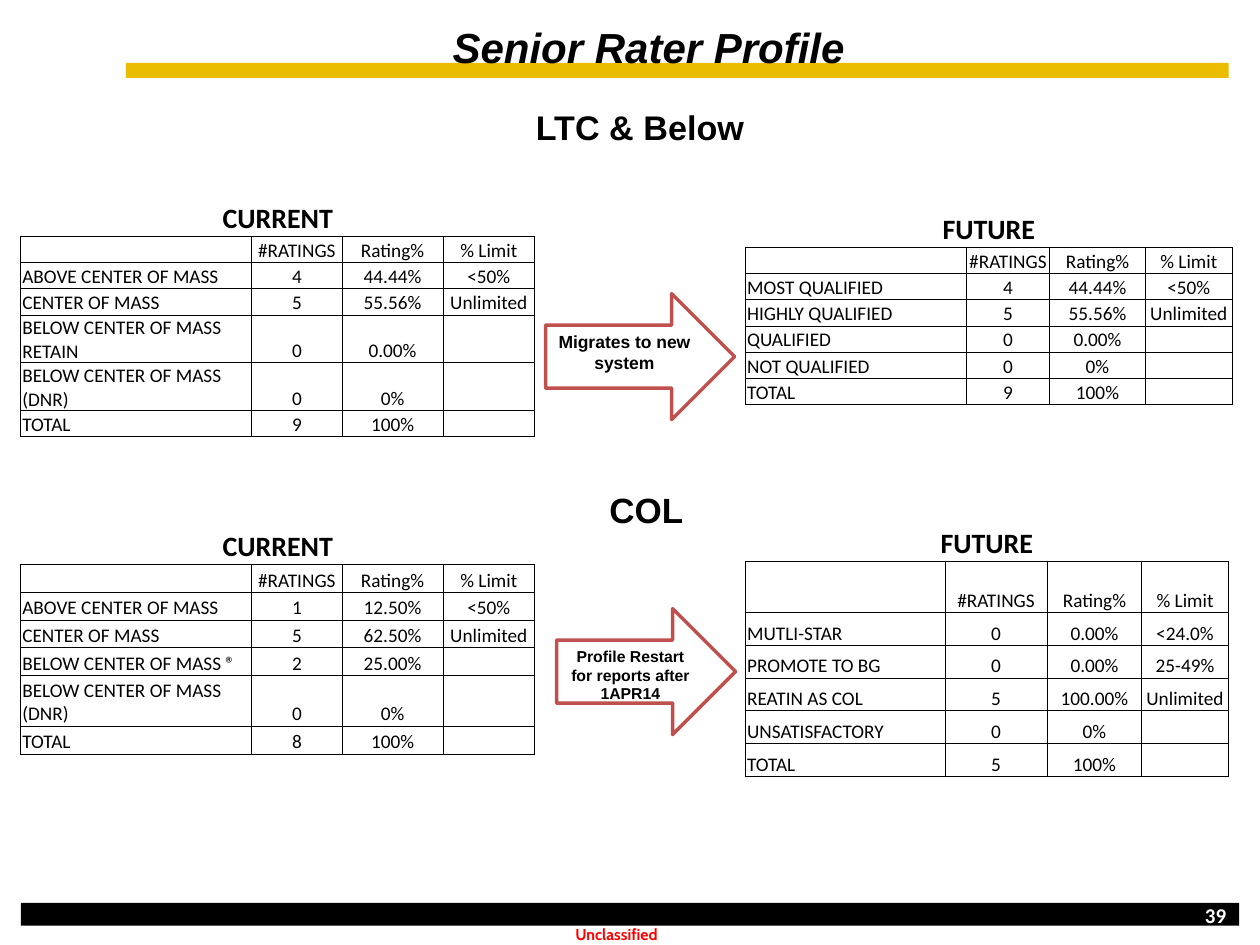
from dataclasses import dataclass
from lxml import etree
from pptx import Presentation
from pptx.dml.color import RGBColor
from pptx.enum import shapes, text
from pptx.oxml import ns
from pptx.util import Cm, Pt

BLACK = RGBColor(0, 0, 0)
WHITE = RGBColor(0xFF, 0xFF, 0xFF)
GOLD = RGBColor(0xEA, 0xBD, 0x00)
RED = RGBColor(0xFF, 0, 0)
BRICK = RGBColor(0xC0, 0x50, 0x4D)

LEFT, CENTER, RIGHT = text.PP_ALIGN.LEFT, text.PP_ALIGN.CENTER, text.PP_ALIGN.RIGHT
TOP, MIDDLE, BOTTOM = text.MSO_ANCHOR.TOP, text.MSO_ANCHOR.MIDDLE, text.MSO_ANCHOR.BOTTOM

HEADER = ("", "#RATINGS", "Rating%", "% Limit")


@dataclass
class Box:
    left: float
    top: float
    width: float
    height: float

    def emu(self) -> tuple:
        return Cm(self.left), Cm(self.top), Cm(self.width), Cm(self.height)


@dataclass
class Label:
    box: Box
    words: str
    size: float
    font: str = "Arial"
    color: RGBColor = BLACK
    align: int = CENTER
    anchor: int = TOP
    wrap: bool = True
    spacing: float = 1.0


@dataclass
class Arrow:
    box: Box
    words: str
    size: float


@dataclass
class Profile:
    left: float
    top: float
    title: str
    cols: tuple
    heights: tuple
    ratings: tuple


LABELS = (
    Label(Box(19.05, 17.91, 5.92, 1.07), "39", 12, "Calibri", WHITE, RIGHT, MIDDLE),
    Label(Box(11.35, 18.52, 2.46, 0.64), "Unclassified", 9, "Cabin", RED, LEFT, wrap=False),
    Label(Box(2.11, 2.11, 21.59, 1.07), "LTC & Below", 19.5, spacing=0.9),
    Label(Box(8.05, 9.73, 9.96, 1.07), "COL", 20),
)

ARROWS = (
    Arrow(Box(11.22, 12.27, 3.61, 2.54), "Profile Restart for reports after 1APR14", 9),
    Arrow(Box(11, 5.92, 3.81, 2.54), "Migrates to new system", 10),
)

CURRENT_COLS = (4.65, 1.83, 2.03, 1.85)
LTC_HEIGHTS = (0.74,) + (0.53,) * 6

PROFILES = (
    Profile(0.42, 4.02, "CURRENT", CURRENT_COLS, LTC_HEIGHTS, (
        ("ABOVE CENTER OF MASS", "4", "44.44%", "<50%"),
        ("CENTER OF MASS", "5", "55.56%", "Unlimited"),
        ("BELOW CENTER OF MASS RETAIN", "0", "0.00%", ""),
        ("BELOW CENTER OF MASS (DNR)", "0", "0%", ""),
        ("TOTAL", "9", "100%", ""))),
    Profile(15.03, 4.24, "FUTURE", (4.45, 1.68, 1.93, 1.75), LTC_HEIGHTS, (
        ("MOST QUALIFIED", "4", "44.44%", "<50%"),
        ("HIGHLY QUALIFIED", "5", "55.56%", "Unlimited"),
        ("QUALIFIED", "0", "0.00%", ""),
        ("NOT QUALIFIED", "0", "0%", ""),
        ("TOTAL", "9", "100%", ""))),
    Profile(0.42, 10.59, "CURRENT", CURRENT_COLS, (0.79,) + (0.56,) * 4 + (1.02, 0.56), (
        ("ABOVE CENTER OF MASS", "1", "12.50%", "<50%"),
        ("CENTER OF MASS", "5", "62.50%", "Unlimited"),
        ("BELOW CENTER OF MASS ®", "2", "25.00%", ""),
        ("BELOW CENTER OF MASS (DNR)", "0", "0%", ""),
        ("TOTAL", "8", "100%", ""))),
    Profile(15.03, 10.37, "FUTURE", (4.02, 2.06, 1.91, 1.74), (0.94, 1.04) + (0.66,) * 5, (
        ("MUTLI-STAR", "0", "0.00%", "<24.0%"),
        ("PROMOTE TO BG", "0", "0.00%", "25-49%"),
        ("REATIN AS COL", "5", "100.00%", "Unlimited"),
        ("UNSATISFACTORY", "0", "0%", ""),
        ("TOTAL", "5", "100%", ""))),
)


def write(tf, words: str, size: float, font: str = "Arial", color: RGBColor = BLACK,
          align: int = CENTER, bold: bool = True, italic: bool = False) -> None:
    p = tf.paragraphs[0]
    p.alignment = align
    if not words:
        etree.SubElement(p._p, ns.qn("a:endParaRPr"), sz=str(int(size * 100)))
        return
    r = p.add_run()
    r.text = words
    for name, value in {"name": font, "size": Pt(size), "bold": bold, "italic": italic}.items():
        setattr(r.font, name, value)
    r.font.color.rgb = color


def add_bar(s, box: Box, color: RGBColor) -> None:
    sp = s.shapes.add_shape(shapes.MSO_SHAPE.RECTANGLE, *box.emu())
    sp.shadow.inherit = False
    sp.fill.solid()
    sp.fill.fore_color.rgb = color
    sp.line.fill.background()


def add_title(s, words: str) -> None:
    sp = s.shapes.title
    for name, value in zip(("left", "top", "width", "height"), Box(2.7, 0, 20.75, 1.63).emu()):
        setattr(sp, name, value)
    tf = sp.text_frame
    tf.auto_size = text.MSO_AUTO_SIZE.NONE
    tf.vertical_anchor = BOTTOM
    tf.margin_bottom = Cm(0.17)
    write(tf, words, 24, italic=True)


def add_label(s, label: Label) -> None:
    tf = s.shapes.add_textbox(*label.box.emu()).text_frame
    tf.word_wrap = label.wrap
    tf.vertical_anchor = label.anchor
    write(tf, label.words, label.size, label.font, label.color, label.align)
    tf.paragraphs[0].line_spacing = label.spacing


def add_arrow(s, arrow: Arrow) -> None:
    sp = s.shapes.add_shape(shapes.MSO_SHAPE.RIGHT_ARROW, *arrow.box.emu())
    sp.shadow.inherit = False
    sp.fill.solid()
    sp.fill.fore_color.rgb = WHITE
    sp.line.color.rgb = BRICK
    sp.line.width = Pt(2)
    sp.text_frame.word_wrap = True
    sp.text_frame.vertical_anchor = TOP
    write(sp.text_frame, arrow.words, arrow.size)


def set_borders(cell, drawn: str) -> None:
    tc_pr = cell._tc.get_or_add_tcPr()
    for i, side in enumerate("LRTB"):
        ln = etree.Element(ns.qn(f"a:ln{side}"), w=str(Pt(0.5)))
        if side in drawn:
            fill = etree.SubElement(ln, ns.qn("a:solidFill"))
            etree.SubElement(fill, ns.qn("a:srgbClr"), val=str(BLACK))
        else:
            etree.SubElement(ln, ns.qn("a:noFill"))
        tc_pr.insert(i, ln)


def add_profile(s, profile: Profile) -> None:
    rows = ((profile.title, "", "", ""), HEADER) + profile.ratings
    box = Box(profile.left, profile.top, sum(profile.cols), sum(profile.heights))
    table = s.shapes.add_table(len(rows), len(HEADER), *box.emu()).table
    table.first_row = table.horz_banding = False
    for col, width in zip(table.columns, profile.cols):
        col.width = Cm(width)
    table.cell(0, 0).merge(table.cell(0, len(HEADER) - 1))
    for i, values in enumerate(rows):
        table.rows[i].height = Cm(profile.heights[i])
        for j, words in enumerate(values):
            cell = table.cell(i, j)
            for side in ("left", "right", "top"):
                setattr(cell, f"margin_{side}", Cm(0.03))
            cell.margin_bottom = 0
            cell.vertical_anchor = BOTTOM
            cell.fill.background()
            set_borders(cell, "LRTB" if i else "B")
            align = LEFT if i and j == 0 else CENTER
            write(cell.text_frame, words, 11 if i else 16, "Calibri", align=align, bold=i == 0)


def main() -> None:
    prs = Presentation()
    prs.slide_width, prs.slide_height = Cm(25.4), Cm(19.05)
    s = prs.slides.add_slide(prs.slide_layouts[5])
    add_bar(s, Box(2.54, 1.27, 22.23, 0.3), GOLD)
    add_bar(s, Box(0.42, 18.2, 24.56, 0.46), BLACK)
    add_title(s, "Senior Rater Profile")
    s.shapes._spTree.append(s.shapes.title._element)
    for label in LABELS:
        add_label(s, label)
    for arrow in ARROWS:
        add_arrow(s, arrow)
    for profile in PROFILES:
        add_profile(s, profile)
    prs.save("out.pptx")


if __name__ == "__main__":
    main()
